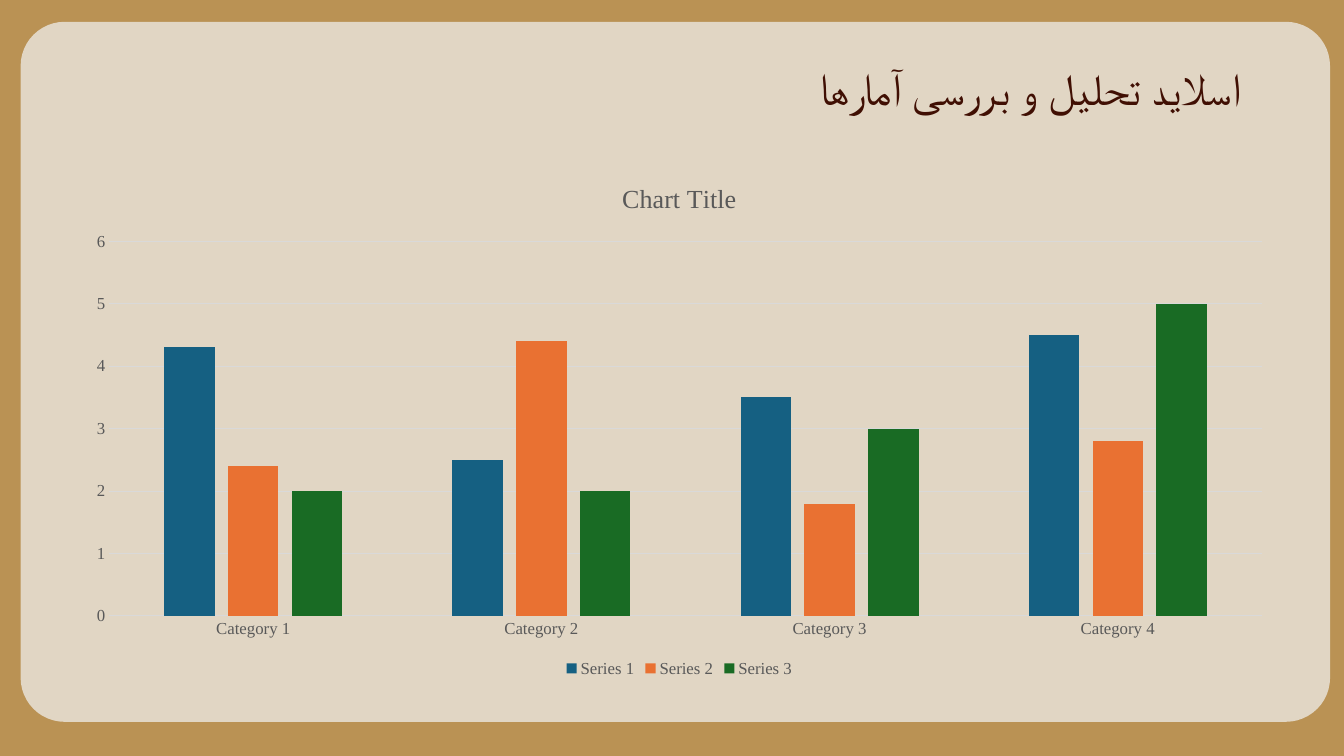
from lxml.etree import SubElement
from pptx import Presentation
from pptx.chart.data import CategoryChartData as Data
from pptx.dml.color import RGBColor as Rgb
from pptx.enum.chart import XL_CHART_TYPE as Kind, XL_LEGEND_POSITION as Place, XL_TICK_MARK as Tick
from pptx.enum.shapes import MSO_SHAPE as Shape
from pptx.enum.text import MSO_ANCHOR as Anchor, PP_ALIGN as Align
from pptx.oxml.ns import qn
from pptx.util import Cm, Pt

HUES = {"back": "BA9254", "panel": "F2F2F2", "title": "400F03", "label": "595959",
        "grid": "D9D9D9", "blue": "156082", "orange": "E97132", "green": "196B24"}
CATS = [f"Category {n}" for n in range(1, 5)]
ROWS = [("Series 1", "blue", (4.3, 2.5, 3.5, 4.5)),
        ("Series 2", "orange", (2.4, 4.4, 1.8, 2.8)),
        ("Series 3", "green", (2, 2, 3, 5))]


class Deck:
    """Draw styled elements on the current slide."""

    def __init__(self, face):
        self.face = face
        self.show = Presentation()
        self.show.slide_width, self.show.slide_height = Cm(33.87), Cm(19.05)
        self.slide = self.show.slides.add_slide(self.show.slide_layouts[6])
        self.paint(self.slide.background.fill, "back")

    def paint(self, fill, hue):
        fill.solid()
        fill.fore_color.rgb = Rgb.from_string(HUES[hue])

    def style(self, font, size, hue):
        font.name, font.size, font.bold = self.face, Pt(size), False
        font.color.rgb = Rgb.from_string(HUES[hue])

    def rule(self, line, hue):
        line.color.rgb = Rgb.from_string(HUES[hue])
        line.width = Pt(0.75)

    def panel(self, box, bend, alpha):
        card = self.slide.shapes.add_shape(Shape.ROUNDED_RECTANGLE, *map(Cm, box))
        card.adjustments[0] = bend
        card.shadow.inherit = False
        self.paint(card.fill, "panel")
        tone = card.fill._xPr.find(qn("a:solidFill"))[0]
        SubElement(tone, qn("a:alpha"), val=str(alpha * 1000))
        card.line.fill.background()

    def title(self, box, text):
        frame = self.slide.shapes.add_textbox(*map(Cm, box)).text_frame
        frame.word_wrap = True
        frame.vertical_anchor = Anchor.MIDDLE
        para = frame.paragraphs[0]
        para.text = text
        para.alignment, para.line_spacing = Align.RIGHT, 0.9
        self.style(para.font, 32, "title")
        props = para._p.get_or_add_pPr()
        props.set("rtl", "1")
        SubElement(props.find(qn("a:defRPr")), qn("a:cs"), typeface=self.face)

    def chart(self, box, head, cats, rows):
        data = Data()
        data.categories = cats
        for name, _, vals in rows:
            data.add_series(name, vals)
        chart = self.slide.shapes.add_chart(Kind.COLUMN_CLUSTERED, *map(Cm, box), data).chart
        self.style(chart.font, 12, "label")
        chart.has_title = True
        para = chart.chart_title.text_frame.paragraphs[0]
        para.text = head
        self.style(para.font, 18.6, "label")
        chart.chart_title.include_in_layout = False
        chart.has_legend = True
        chart.legend.position = Place.BOTTOM
        chart.legend.include_in_layout = False
        self.style(chart.legend.font, 12, "label")
        for axis in (chart.category_axis, chart.value_axis):
            axis.major_tick_mark = axis.minor_tick_mark = Tick.NONE
            self.style(axis.tick_labels.font, 12, "label")
        self.rule(chart.category_axis.format.line, "grid")
        scale = chart.value_axis
        scale.minimum_scale, scale.maximum_scale, scale.major_unit = 0, 6, 1
        scale.format.line.fill.background()
        self.rule(scale.major_gridlines.format.line, "grid")
        plot = chart.plots[0]
        plot.gap_width, plot.overlap, plot.vary_by_categories = 219, -27, False
        for bar, (_, hue, _) in zip(plot.series, rows):
            self.paint(bar.format.fill, hue)


def main():
    deck = Deck("Times New Roman")
    deck.panel((0.52, 0.55, 33, 17.64), 0.063, 71)
    deck.title((3.2, 1.02, 28.32, 2.57), "اسلاید تحلیل و بررسی آمارها")
    deck.chart((1.83, 4.09, 30.58, 13.08), "Chart Title", CATS, ROWS)
    deck.show.save("out.pptx")


if __name__ == "__main__":
    main()
